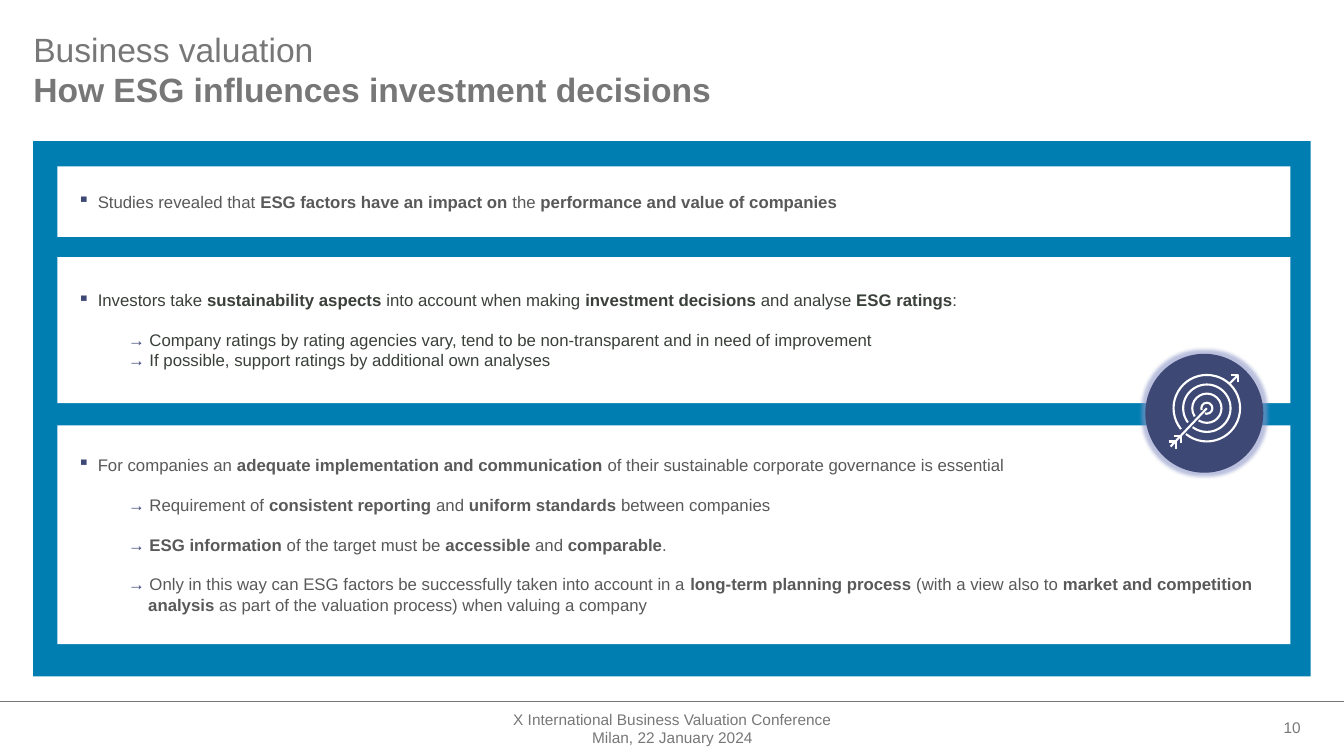
import pptx
import pptx.util
import pptx.dml.color
import pptx.enum.shapes
import pptx.enum.text
import pptx.oxml
import pptx.oxml.ns
from dataclasses import dataclass

Inches = pptx.util.Inches
Pt = pptx.util.Pt
SHAPE = pptx.enum.shapes.MSO_SHAPE
LINE = pptx.enum.shapes.MSO_CONNECTOR.STRAIGHT
ANCHOR = pptx.enum.text.MSO_ANCHOR
ALIGN = pptx.enum.text.PP_ALIGN


@dataclass(frozen=True)
class Theme:
    font: str = "Arial"
    grey: str = "777777"
    text: str = "595959"
    dark: str = "3A403A"
    blue: str = "007EB2"
    navy: str = "3E4875"
    glow: str = "8C96C8"
    white: str = "FFFFFF"
    title_size: int = 24
    body_size: int = 12
    footer_size: int = 11


THEME = Theme()
PANELS = [  # top, height, text colour, lines as (level, space before, text)
    (0.25, 0.7, THEME.text, [
        (0, 0, "Studies revealed that **ESG factors have an impact on **the "
               "**performance and value of companies**")]),
    (1.15, 1.45, THEME.dark, [
        (0, 0, "Investors take **sustainability aspects** into account when making "
               "**investment decisions **and analyse **ESG ratings**:"),
        (1, 14, "Company ratings by rating agencies vary, tend to be non-transparent "
                "and in need of improvement"),
        (1, 0, "If possible, support ratings by additional own analyses")]),
    (2.82, 2.17, THEME.text, [
        (0, 0, "For companies an **adequate implementation and communication **of their "
               "sustainable corporate governance is essential"),
        (1, 14, "Requirement of **consistent reporting **and **uniform standards **"
                "between companies"),
        (1, 14, "**ESG information **of the target must be **accessible** and "
                "**comparable**."),
        (1, 14, "Only in this way can ESG factors be successfully taken into account in a "
                "**long-term planning process **(with a view also to **market and "
                "competition analysis **as part of the valuation process) when valuing "
                "a company")]),
]


def rgb(value):
    return pptx.dml.color.RGBColor.from_string(value)


def apply(target, formats):
    for name, value in formats.items():
        setattr(target, name, value)


def place(shape, box):
    apply(shape, dict(zip(("left", "top", "width", "height"), map(Inches, box))))


def set_frame(frame, anchor, margins=(0.1, 0.05, 0.1, 0.05)):
    names = ("margin_left", "margin_top", "margin_right", "margin_bottom")
    apply(frame, {"word_wrap": True, "vertical_anchor": anchor,
                  "auto_size": pptx.enum.text.MSO_AUTO_SIZE.NONE,
                  **dict(zip(names, map(Inches, margins)))})


def add_span(para, text, size, color, bold=False):
    span = para.add_run()
    span.text = text
    apply(span.font, {"name": THEME.font, "size": Pt(size), "bold": bold})
    span.font.color.rgb = rgb(color)


def set_bullet(para, indent, hanging, symbol=None):
    props = para._p.get_or_add_pPr()
    props.set("marL", str(Inches(indent)))
    props.set("indent", str(-Inches(hanging)))
    if symbol:
        tint = pptx.oxml.ns.qn("a:buClr")
        color = props.makeelement(tint, {})
        color.append(props.makeelement(pptx.oxml.ns.qn("a:srgbClr"), {"val": THEME.navy}))
        props.append(color)
        props.append(props.makeelement(pptx.oxml.ns.qn("a:buChar"), {"char": symbol}))
    else:
        props.append(props.makeelement(pptx.oxml.ns.qn("a:buNone"), {}))


def add_solid(page, kind, box, color):
    shape = page.shapes.add_shape(kind, *map(Inches, box))
    shape.shadow.inherit = False
    shape.fill.solid()
    shape.fill.fore_color.rgb = rgb(color)
    shape.line.fill.background()
    return shape


def add_line(page, start, end, color, width):
    line = page.shapes.add_connector(LINE, *map(Inches, start + end))
    line.line.color.rgb = rgb(color)
    line.line.width = Pt(width)
    props = line._element.spPr
    props.append(props.makeelement(pptx.oxml.ns.qn("a:effectLst"), {}))


def outline(shape):
    shape.shadow.inherit = False
    shape.fill.background()
    shape.line.color.rgb = rgb(THEME.white)
    shape.line.width = Pt(1.5)


def build_heading(page, box):
    left, top, width, height = box
    rows = [(page.placeholders[1], "Business valuation", False),
            (page.shapes.title, "How ESG influences investment decisions", True)]
    for row, (holder, text, bold) in enumerate(rows):
        place(holder, (left, top + row * height / 2, width, height / 2))
        set_frame(holder.text_frame, ANCHOR.TOP, (0, 0, 0, 0.08))
        para = holder.text_frame.paragraphs[0]
        set_bullet(para, 0, 0)
        apply(para, {"alignment": ALIGN.LEFT, "line_spacing": 0.9, "space_before": Pt(0)})
        add_span(para, text, THEME.title_size, THEME.grey, bold)


def build_panel(page, box, color, lines):
    frame = add_solid(page, SHAPE.RECTANGLE, box, THEME.white).text_frame
    set_frame(frame, ANCHOR.MIDDLE, (0.2, 0, 0.2, 0))
    for index, (level, space, text) in enumerate(lines):
        para = frame.add_paragraph() if index else frame.paragraphs[0]
        apply(para, {"level": level, "alignment": ALIGN.LEFT, "space_before": Pt(space)})
        if level:
            set_bullet(para, 0.7, 0.2)
            add_span(para, "→ ", THEME.body_size, THEME.navy)
        else:
            set_bullet(para, 0.2, 0.2, "▪")
        for part, piece in enumerate(text.split("**")):
            if piece:
                add_span(para, piece, THEME.body_size, color, part % 2 == 1)


def build_content(page, box):
    left, top, width, _ = box
    add_solid(page, SHAPE.RECTANGLE, box, THEME.blue)
    for offset, height, color, lines in PANELS:
        build_panel(page, (left + 0.24, top + offset, width - 0.44, height), color, lines)


def build_target(page, box):
    # Disc with a soft glow
    disc = add_solid(page, SHAPE.OVAL, box, THEME.navy)
    effects = disc._element.spPr.find(pptx.oxml.ns.qn("a:effectLst"))
    effects.append(pptx.oxml.parse_xml(
        '<a:glow xmlns:a="http://schemas.openxmlformats.org/drawingml/2006/main" '
        f'rad="63500"><a:srgbClr val="{THEME.glow}"><a:alpha val="60000"/>'
        '</a:srgbClr></a:glow>'))
    # Rings, open at the lower left where the arrow passes
    x, y = box[0] + 0.61, box[1] + 0.54
    for radius, gap in ((0.33, 6), (0.235, 8), (0.145, 11), (0.055, 25)):
        ring = page.shapes.add_shape(
            SHAPE.ARC, *map(Inches, (x - radius, y - radius, 2 * radius, 2 * radius)))
        ring.adjustments[0] = (135 + gap) * 0.6
        ring.adjustments[1] = (135 - gap) * 0.6
        outline(ring)
    # Arrow shaft and tip, then the chevrons of head and feathers
    for start, end in (((-0.36, 0.38), (0, 0)), ((0.22, -0.24), (0.31, -0.33))):
        add_line(page, (x + start[0], y + start[1]), (x + end[0], y + end[1]),
                 THEME.white, 1.5)
    for dx, dy in ((0.31, -0.33), (-0.26, 0.28), (-0.31, 0.33)):
        corner_x, corner_y = x + dx, y + dy
        chevron = page.shapes.build_freeform(Inches(corner_x - 0.07), Inches(corner_y))
        chevron.add_line_segments(
            [(Inches(corner_x), Inches(corner_y)),
             (Inches(corner_x), Inches(corner_y + 0.07))], close=False)
        outline(chevron.convert_to_shape())


def build_footer(page, box):
    left, top, width, _ = box
    add_line(page, (left, top), (left + width, top), THEME.grey, 0.5)
    notes = [((4.42, 0.11, 4.5, 0.31), ALIGN.CENTER,
              ["X International Business Valuation Conference", "Milan, 22 January 2024"]),
             ((12.27, 0.11, 0.73, 0.3), ALIGN.RIGHT, ["10"])]
    for (dx, dy, wide, high), alignment, lines in notes:
        note = page.shapes.add_textbox(*map(Inches, (left + dx, top + dy, wide, high)))
        set_frame(note.text_frame, ANCHOR.MIDDLE)
        for index, text in enumerate(lines):
            para = note.text_frame.add_paragraph() if index else note.text_frame.paragraphs[0]
            para.alignment = alignment
            add_span(para, text, THEME.footer_size, THEME.grey)


def main():
    deck = pptx.Presentation()
    apply(deck, {"slide_width": Inches(13.33), "slide_height": Inches(7.5)})
    page = deck.slides.add_slide(deck.slide_layouts[1])
    build_heading(page, (0.33, 0.33, 12.4, 0.8))
    build_content(page, (0.33, 1.4, 12.67, 5.31))
    build_target(page, (11.36, 3.51, 1.17, 1.18))
    build_footer(page, (0, 6.96, 13.33, 0.54))
    deck.save("out.pptx")


if __name__ == "__main__":
    main()
